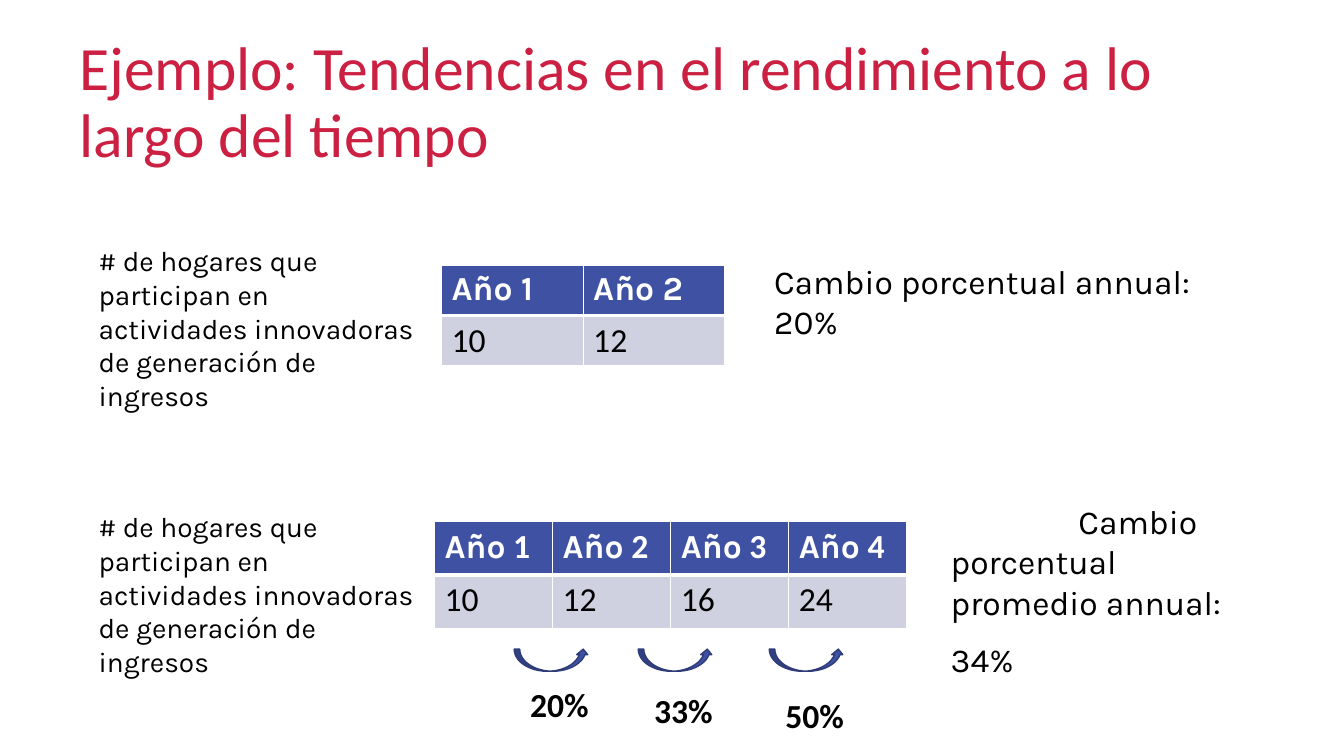
from lxml.etree import SubElement
from pptx import Presentation
from pptx.dml.color import RGBColor
from pptx.enum.shapes import MSO_SHAPE
from pptx.enum.text import MSO_ANCHOR
from pptx.oxml.ns import qn
from pptx.util import Inches, Pt

RED, BLUE, NAVY, GREY = "CB2042", "3F51A2", "2F3C78", "CFD0E0"
WHITE, BLACK = "FFFFFF", "000000"


def color(hex_code):
    return RGBColor.from_string(hex_code)


def write(para, text, hex_code=BLACK, **formats):
    span = para.add_run()
    span.text = text
    span.font.color.rgb = color(hex_code)
    for name, value in formats.items():
        setattr(span.font, name, value)


deck = Presentation()
deck.slide_width, deck.slide_height = Inches(13.33), Inches(7.5)
page = deck.slides.add_slide(deck.slide_layouts[6])

# The page is a grid of 100 columns and 100 rows
column, row = deck.slide_width / 100, deck.slide_height / 100

title = {"name": "Calibri", "size": Pt(44)}
note = {"name": "Karla", "size": Pt(20)}
result = {"name": "Karla", "size": Pt(24)}
figure = {"name": "Calibri", "size": Pt(24), "bold": False}
header = {"name": "Karla", "size": Pt(24), "bold": True}
growth = figure | {"bold": True}

households = "# de hogares que participan en actividades innovadoras de generación de ingresos"
texts = [
    ("title", 5.18, 4.13, 86.2, 19.33, RED, title,
     ["Ejemplo: Tendencias en el rendimiento a lo largo del tiempo"]),
    ("note", 6.6, 31.6, 25.73, 19.33, BLACK, note, [households]),
    ("note", 6.6, 66.8, 25.73, 19.33, BLACK, note, [households]),
    ("change", 56.86, 33.87, 34.5, 12.13, BLACK, result,
     ["Cambio porcentual annual: 20%"]),
    ("average", 70, 60.4, 23.4, 25.6, BLACK, result,
     ["Cambio porcentual promedio annual:", "34%"]),
]
for role, left, top, width, height, hex_code, formats, lines in texts:
    box = page.shapes.add_textbox(
        int(left * column), int(top * row), int(width * column), int(height * row))
    frame = box.text_frame
    frame.word_wrap = True
    for index, line in enumerate(lines):
        para = frame.add_paragraph() if index else frame.paragraphs[0]
        if index:
            para.space_before = Pt(12)
        write(para, line, hex_code, **formats)
    if role == "title":
        frame.vertical_anchor = MSO_ANCHOR.MIDDLE
        frame.paragraphs[0].line_spacing = 0.9
    elif role == "average":
        frame.margin_top = int(5.87 * row)
        frame.paragraphs[0]._p.get_or_add_pPr().set("indent", str(int(9.5 * column)))

# left, top, cell width, cell height, font of the year number, values
tables = [
    (32.86, 35.07, 10.53, 6.67, "Karla", [10, 12]),
    (32.33, 68.93, 8.79, 7.11, "Calibri", [10, 12, 16, 24]),
]
for left, top, cell_width, cell_height, digit_font, values in tables:
    table = page.shapes.add_table(
        2, len(values), int(left * column), int(top * row),
        int(len(values) * cell_width * column), int(2 * cell_height * row)).table
    for index, value in enumerate(values):
        year, amount = table.cell(0, index), table.cell(1, index)
        write(year.text_frame.paragraphs[0], "Año", WHITE, **header)
        write(year.text_frame.paragraphs[0], f" {index + 1}", WHITE,
              **header | {"name": digit_font})
        write(amount.text_frame.paragraphs[0], str(value), **figure)
        for cell, fill, bottom in ((year, BLUE, 3), (amount, GREY, 1)):
            properties = cell._tc.get_or_add_tcPr()
            top_width = 1 if cell is year else 3
            for side, points in zip("LRTB", (1, 1, top_width, bottom)):
                border = SubElement(properties, qn(f"a:ln{side}"), w=str(Pt(points)))
                paint = SubElement(border, qn("a:solidFill"))
                SubElement(paint, qn("a:srgbClr"), val=WHITE)
            cell.fill.solid()
            cell.fill.fore_color.rgb = color(fill)

# Yearly growth: an arrow with its rate, each rate a little lower than the last
for index, (left, rate) in enumerate([(38.26, "20%"), (47.49, "33%"), (57.24, "50%")]):
    step = page.shapes.add_group_shape()
    arrow = step.shapes.add_shape(
        MSO_SHAPE.CURVED_UP_ARROW, int(left * column), int(85.87 * row),
        int(5.55 * column), int(2.93 * row))
    arrow.shadow.inherit = False
    arrow.fill.solid()
    arrow.fill.fore_color.rgb = color(BLUE)
    arrow.line.color.rgb = color(NAVY)
    arrow.line.width = Pt(1)
    label = step.shapes.add_textbox(
        int((left + 0.45) * column), int((89.87 + 0.67 * index) * row),
        int(8.18 * column), int(6.67 * row))
    label.text_frame.word_wrap = True
    write(label.text_frame.paragraphs[0], rate, **growth)

deck.save("out.pptx")
